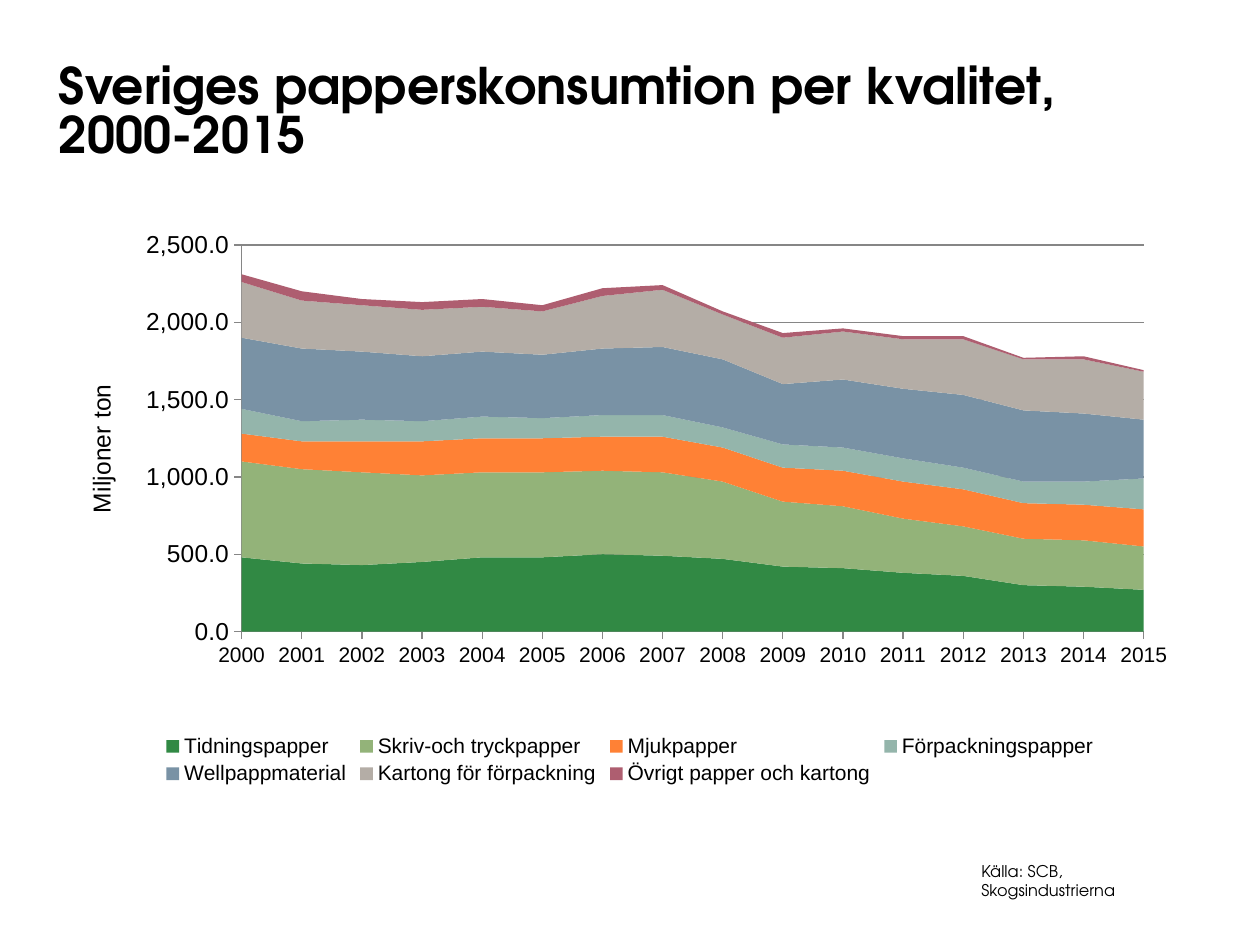
from lxml import etree
from pptx import Presentation
from pptx.chart.data import CategoryChartData
from pptx.dml.color import RGBColor
from pptx.enum.chart import XL_CHART_TYPE, XL_LEGEND_POSITION, XL_TICK_MARK
from pptx.enum.text import MSO_ANCHOR, MSO_AUTO_SIZE, PP_ALIGN
from pptx.oxml.ns import qn
from pptx.util import Emu, Pt

AREA_STACKED = XL_CHART_TYPE.AREA_STACKED
BOTTOM_LEGEND = XL_LEGEND_POSITION.BOTTOM
TICK_OUTSIDE = XL_TICK_MARK.OUTSIDE
ANCHOR_BOTTOM = MSO_ANCHOR.BOTTOM
ANCHOR_MIDDLE = MSO_ANCHOR.MIDDLE
NO_AUTOFIT = MSO_AUTO_SIZE.NONE
LEFT = PP_ALIGN.LEFT

EMU_PER_PX = 914400 / 126
BRAND_FONT = "TeX Gyre Adventor"
CHART_FONT = "Arial"
BLACK = RGBColor(0x00, 0x00, 0x00)
AXIS_GREY = RGBColor(0x86, 0x86, 0x86)

YEARS = [str(year) for year in range(2000, 2016)]
PAPER_GRADES = [
    ("Tidningspapper", RGBColor(0x31, 0x89, 0x44),
     [480, 440, 430, 450, 480, 480, 500, 490, 470, 420, 410, 380, 360, 300, 290, 270]),
    ("Skriv-och tryckpapper", RGBColor(0x93, 0xB3, 0x79),
     [620, 610, 600, 560, 550, 550, 540, 540, 500, 420, 400, 350, 320, 300, 300, 280]),
    ("Mjukpapper", RGBColor(0xFF, 0x81, 0x35),
     [180, 180, 200, 220, 220, 220, 220, 230, 220, 220, 230, 240, 240, 230, 230, 240]),
    ("Förpackningspapper", RGBColor(0x94, 0xB5, 0xAB),
     [160, 130, 140, 130, 140, 130, 140, 140, 130, 150, 150, 150, 140, 140, 150, 200]),
    ("Wellpappmaterial", RGBColor(0x79, 0x92, 0xA5),
     [460, 470, 440, 420, 420, 410, 430, 440, 440, 390, 440, 450, 470, 460, 440, 380]),
    ("Kartong för förpackning", RGBColor(0xB4, 0xAD, 0xA6),
     [360, 310, 300, 300, 290, 280, 340, 370, 290, 300, 310, 320, 360, 330, 350, 310]),
    ("Övrigt papper och kartong", RGBColor(0xAE, 0x5E, 0x70),
     [50, 60, 40, 50, 50, 40, 50, 30, 20, 30, 20, 20, 20, 10, 20, 10]),
]
PLOT_LAYOUT = {"layoutTarget": "inner", "xMode": "edge", "yMode": "edge",
               "x": 0.16, "y": 0.07, "w": 0.79, "h": 0.66}


def px(length):
    """Turn whole pixels into EMU."""
    return Emu(round(length * EMU_PER_PX))


def style_font(font, name, size, bold=False):
    """Set the face, size and weight of a black font."""
    font.name = name
    font.size = Pt(size)
    font.bold = bold
    font.color.rgb = BLACK


def add_span(para, text, size, bold=False):
    """Add one run in the brand font."""
    span = para.add_run()
    span.text = text
    style_font(span.font, BRAND_FONT, size, bold)


def fill_title(page, lines):
    """Place and fill the title placeholder."""
    title = page.shapes.title
    title.left, title.top, title.width, title.height = px(59), px(58), px(1142), px(105)
    frame = title.text_frame
    frame.auto_size = NO_AUTOFIT
    frame.word_wrap = True
    frame.vertical_anchor = ANCHOR_BOTTOM
    frame.margin_left = frame.margin_top = frame.margin_right = frame.margin_bottom = 0
    para = frame.paragraphs[0]
    para.alignment = LEFT
    para.line_spacing = 0.8
    for index, line in enumerate(lines):
        if index:
            para.add_line_break()
        add_span(para, line, 28.8, bold=True)


def add_source(page, text):
    """Add the source note at the lower right."""
    box = page.shapes.add_textbox(px(969), px(857), px(244), px(47))
    frame = box.text_frame
    frame.word_wrap = True
    frame.vertical_anchor = ANCHOR_MIDDLE
    add_span(frame.paragraphs[0], text, 9.2)


def set_plot_layout(chart):
    """Fix the inner plot area as fractions of the chart."""
    plot_area = chart.element.find(".//" + qn("c:plotArea"))
    for old in plot_area.findall(qn("c:layout")):
        plot_area.remove(old)
    layout = etree.Element(qn("c:layout"))
    manual = etree.SubElement(layout, qn("c:manualLayout"))
    for tag, value in PLOT_LAYOUT.items():
        etree.SubElement(manual, qn("c:" + tag)).set("val", str(value))
    plot_area.insert(0, layout)
    plot_area.find(".//" + qn("c:crossBetween")).set("val", "midCat")


def style_axis(axis, size):
    """Give an axis grey lines, outside ticks and black labels."""
    axis.major_tick_mark = TICK_OUTSIDE
    axis.format.line.color.rgb = AXIS_GREY
    axis.format.line.width = Pt(0.75)
    style_font(axis.tick_labels.font, CHART_FONT, size)


def style_value_axis(axis, caption):
    """Set the scale, gridlines and turned title of the value axis."""
    style_axis(axis, 14)
    axis.minimum_scale, axis.maximum_scale, axis.major_unit = 0, 2500, 500
    axis.has_major_gridlines = True
    axis.major_gridlines.format.line.color.rgb = AXIS_GREY
    axis.major_gridlines.format.line.width = Pt(0.75)
    axis.tick_labels.number_format = "#,##0.0"
    axis.tick_labels.number_format_is_linked = False
    frame = axis.axis_title.text_frame
    span = frame.paragraphs[0].add_run()
    span.text = caption
    style_font(span.font, CHART_FONT, 14)
    body = axis.axis_title.element.find(".//" + qn("a:bodyPr")) if hasattr(
        axis.axis_title, "element") else frame._txBody.find(qn("a:bodyPr"))
    body.set("rot", "-5400000")
    body.set("vert", "horz")


def add_consumption_chart(page):
    """Add the stacked area chart of paper consumption."""
    data = CategoryChartData(number_format="0")
    data.categories = YEARS
    for name, _, values in PAPER_GRADES:
        data.add_series(name, values)
    chart = page.shapes.add_chart(
        AREA_STACKED, px(59), px(204), px(1142), px(586), data).chart
    style_font(chart.font, BRAND_FONT, 10)
    chart.has_title = False
    chart.plots[0].vary_by_categories = False
    for series, (_, color, _) in zip(chart.plots[0].series, PAPER_GRADES):
        series.format.fill.solid()
        series.format.fill.fore_color.rgb = color
        series.format.line.fill.background()
    style_axis(chart.category_axis, 12)
    chart.category_axis.has_major_gridlines = False
    style_value_axis(chart.value_axis, "Miljoner ton")
    chart.has_legend = True
    chart.legend.position = BOTTOM_LEGEND
    chart.legend.include_in_layout = False
    style_font(chart.legend.font, CHART_FONT, 12)
    set_plot_layout(chart)


def main():
    """Build and save the slide."""
    deck = Presentation()
    deck.slide_width, deck.slide_height = px(1260), px(945)
    page = deck.slides.add_slide(deck.slide_layouts[5])
    add_consumption_chart(page)
    fill_title(page, ["Sveriges papperskonsumtion per kvalitet,", "2000-2015"])
    add_source(page, "Källa: SCB, Skogsindustrierna")
    deck.save("out.pptx")


if __name__ == "__main__":
    main()
